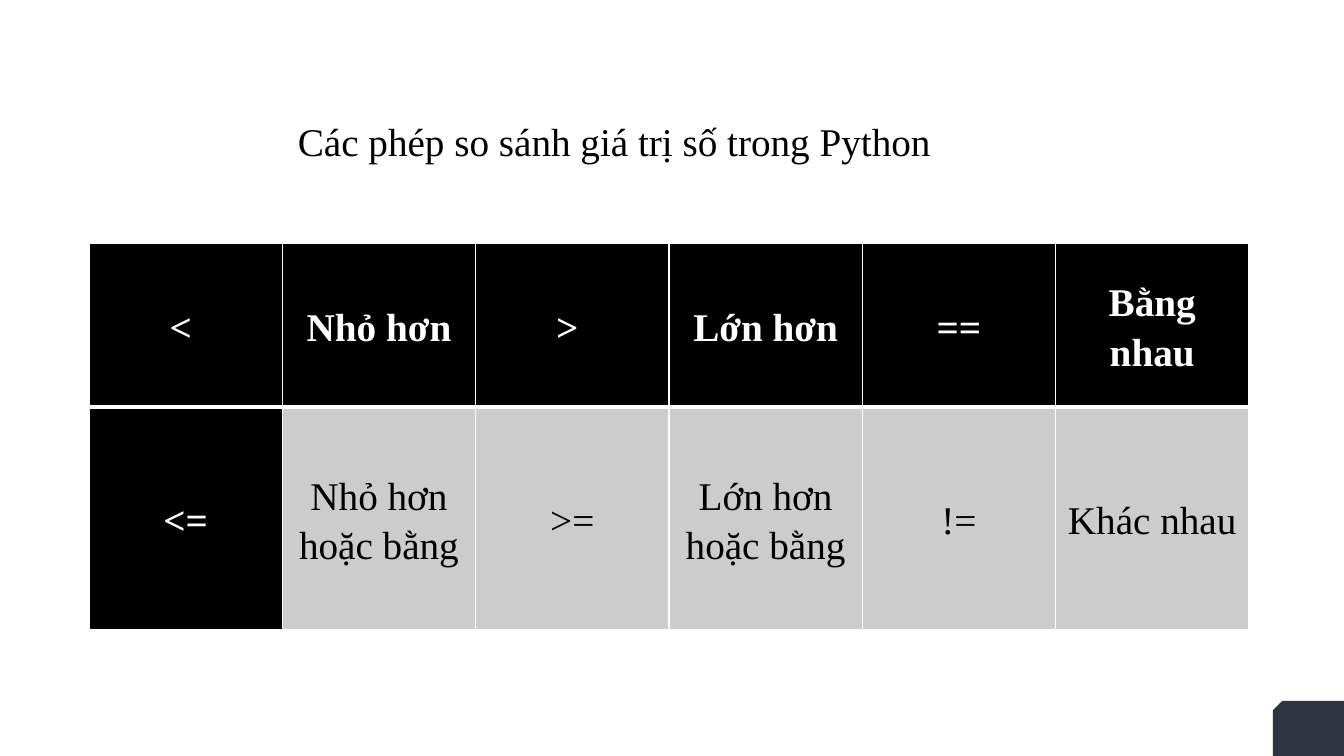
from dataclasses import dataclass

from lxml.etree import SubElement
from pptx import Presentation
from pptx.dml.color import RGBColor
from pptx.enum.shapes import MSO_SHAPE as Preset
from pptx.enum.text import MSO_ANCHOR as Anchor, MSO_AUTO_SIZE as AutoSize, PP_ALIGN as Align
from pptx.oxml.ns import qn
from pptx.util import Pt

EMU_PER_PX = 914400 / 100.8


def px(length):
    return round(length * EMU_PER_PX)


@dataclass(frozen=True)
class Theme:
    font: str = "Times New Roman"
    size: int = 28
    line_spacing: float = 1.15
    ink: str = "000000"
    paper: str = "FFFFFF"
    band: str = "CCCCCC"
    corner: str = "2F3342"
    thin: int = 1
    thick: int = 3


class SlideBuilder:
    def __init__(self, slide, theme):
        self.shapes = slide.shapes
        self.theme = theme

    def wording(self, frame, words, color, align, bold=False):
        paragraph = frame.paragraphs[0]
        paragraph.alignment = align
        paragraph.line_spacing = self.theme.line_spacing
        run = paragraph.add_run()
        run.text = words
        formats = {"name": self.theme.font, "size": Pt(self.theme.size), "bold": bold}
        for key, value in formats.items():
            setattr(run.font, key, value)
        run.font.color.rgb = RGBColor.from_string(color)

    def corner(self, left, top, width, height):
        tab = self.shapes.add_shape(Preset.SNIP_1_RECTANGLE, *map(px, (left, top, width, height)))
        tab.shadow.inherit = False
        tab.fill.solid()
        tab.fill.fore_color.rgb = RGBColor.from_string(self.theme.corner)
        tab.line.fill.background()
        tab.element.spPr.find(qn("a:xfrm")).set("flipH", "1")

    def title(self, words, left, top, width, height):
        frame = self.shapes.add_textbox(*map(px, (left, top, width, height))).text_frame
        formats = {"word_wrap": False, "auto_size": AutoSize.SHAPE_TO_FIT_TEXT}
        for key, value in formats.items():
            setattr(frame, key, value)
        self.wording(frame, words, self.theme.ink, Align.JUSTIFY)

    def borders(self, cell, widths):
        properties = cell._tc.get_or_add_tcPr()
        for index, (side, width) in enumerate(widths.items()):
            line = SubElement(properties, qn(f"a:{side}"), w=str(Pt(width)))
            fill = SubElement(line, qn("a:solidFill"))
            SubElement(fill, qn("a:srgbClr"), val=self.theme.paper)
            # Borders come before the cell fill
            properties.insert(index, line)

    def cell(self, cell, words, is_header, widths):
        formats = {"vertical_anchor": Anchor.MIDDLE, "margin_left": px(7),
                   "margin_right": px(7), "margin_top": 0, "margin_bottom": 0}
        for key, value in formats.items():
            setattr(cell, key, value)
        cell.fill.solid()
        cell.fill.fore_color.rgb = RGBColor.from_string(
            self.theme.ink if is_header else self.theme.band)
        self.wording(cell.text_frame, words, self.theme.paper if is_header else self.theme.ink,
                     Align.CENTER, is_header)
        self.borders(cell, widths)

    def table(self, rows, left, top, width, heights):
        grid = self.shapes.add_table(len(rows), len(rows[0]),
                                     *map(px, (left, top, width, sum(heights)))).table
        for r, (row, height) in enumerate(zip(rows, heights)):
            grid.rows[r].height = px(height)
            widths = dict.fromkeys(("lnL", "lnR", "lnT", "lnB"), self.theme.thin)
            widths["lnT" if r else "lnB"] = self.theme.thick
            for c, words in enumerate(row):
                self.cell(grid.cell(r, c), words, r == 0 or c == 0, widths)


def main():
    deck = Presentation()
    deck.slide_width, deck.slide_height = px(1344), px(756)
    builder = SlideBuilder(deck.slides.add_slide(deck.slide_layouts[6]), Theme())

    # Corner tab
    builder.corner(1273, 701, 71, 55)

    # Comparison operators and their meanings
    comparisons = [
        ["< ", "Nhỏ hơn", "> ", "Lớn hơn", "==", "Bằng nhau"],
        ["<=", "Nhỏ hơn hoặc bằng", ">=", "Lớn hơn hoặc bằng", "!=", "Khác nhau"],
    ]
    builder.table(comparisons, 89, 243, 1160, (164, 223))

    # Title
    builder.title("Các phép so sánh giá trị số trong Python", 288, 105, 659, 60)

    deck.save("out.pptx")


if __name__ == "__main__":
    main()
